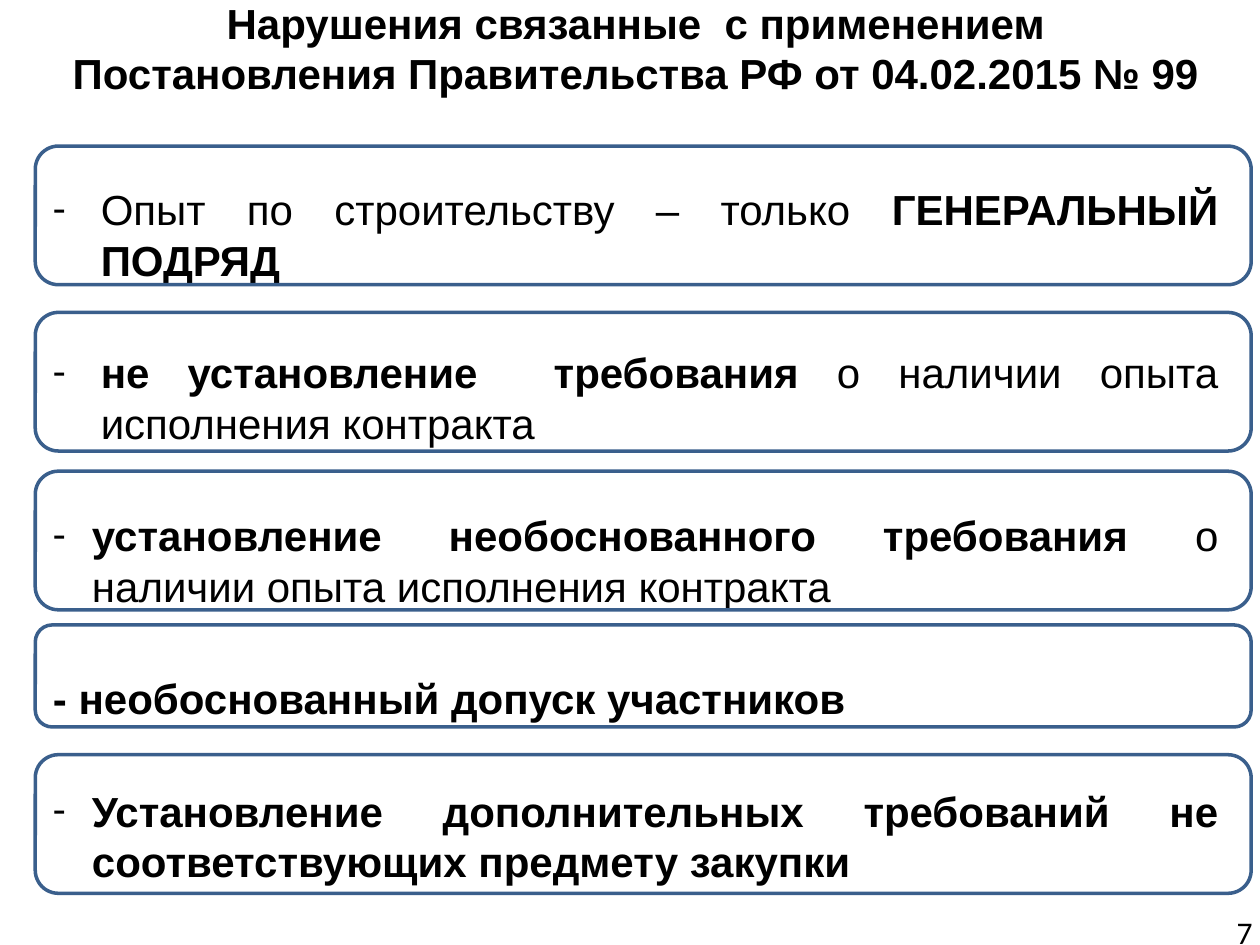
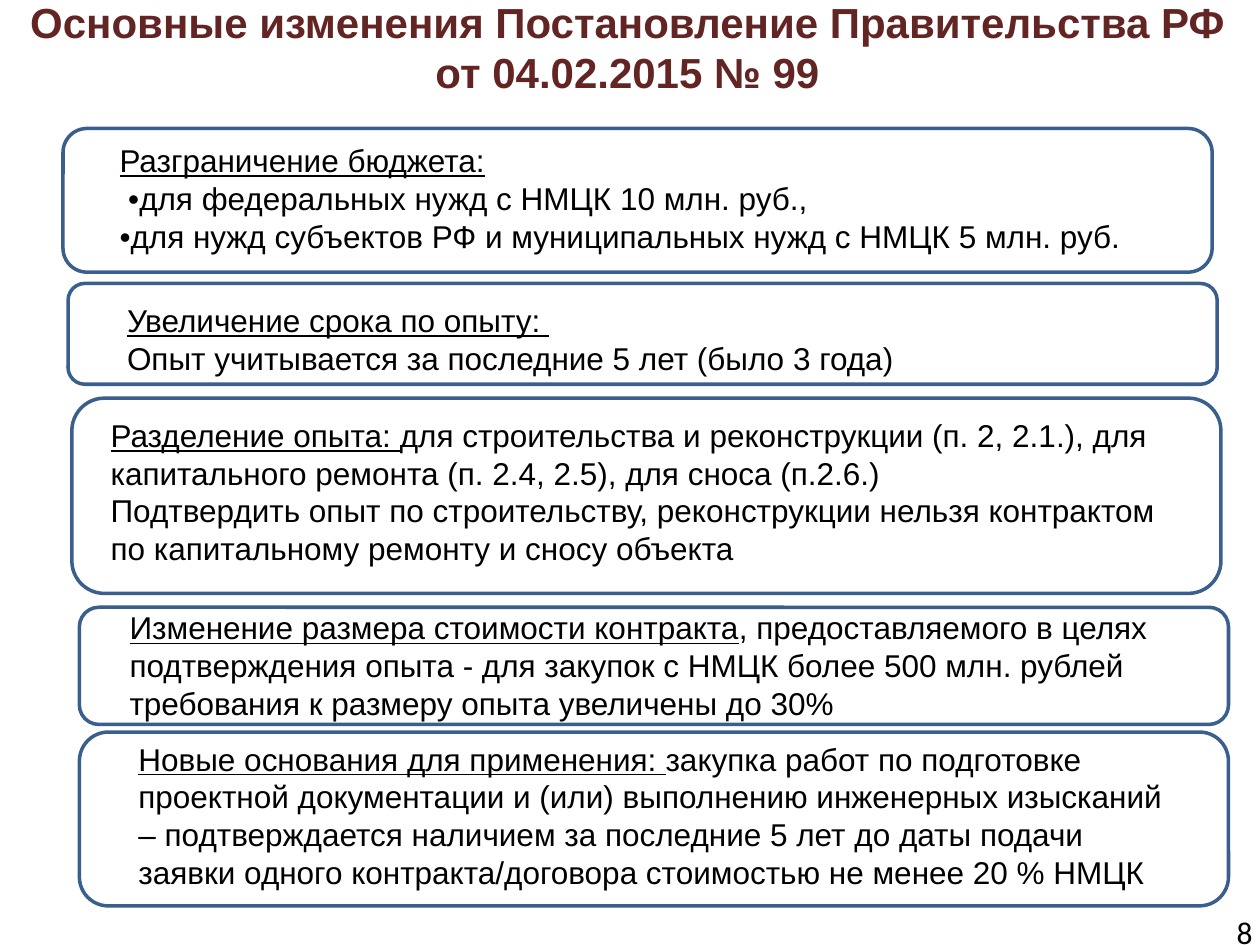
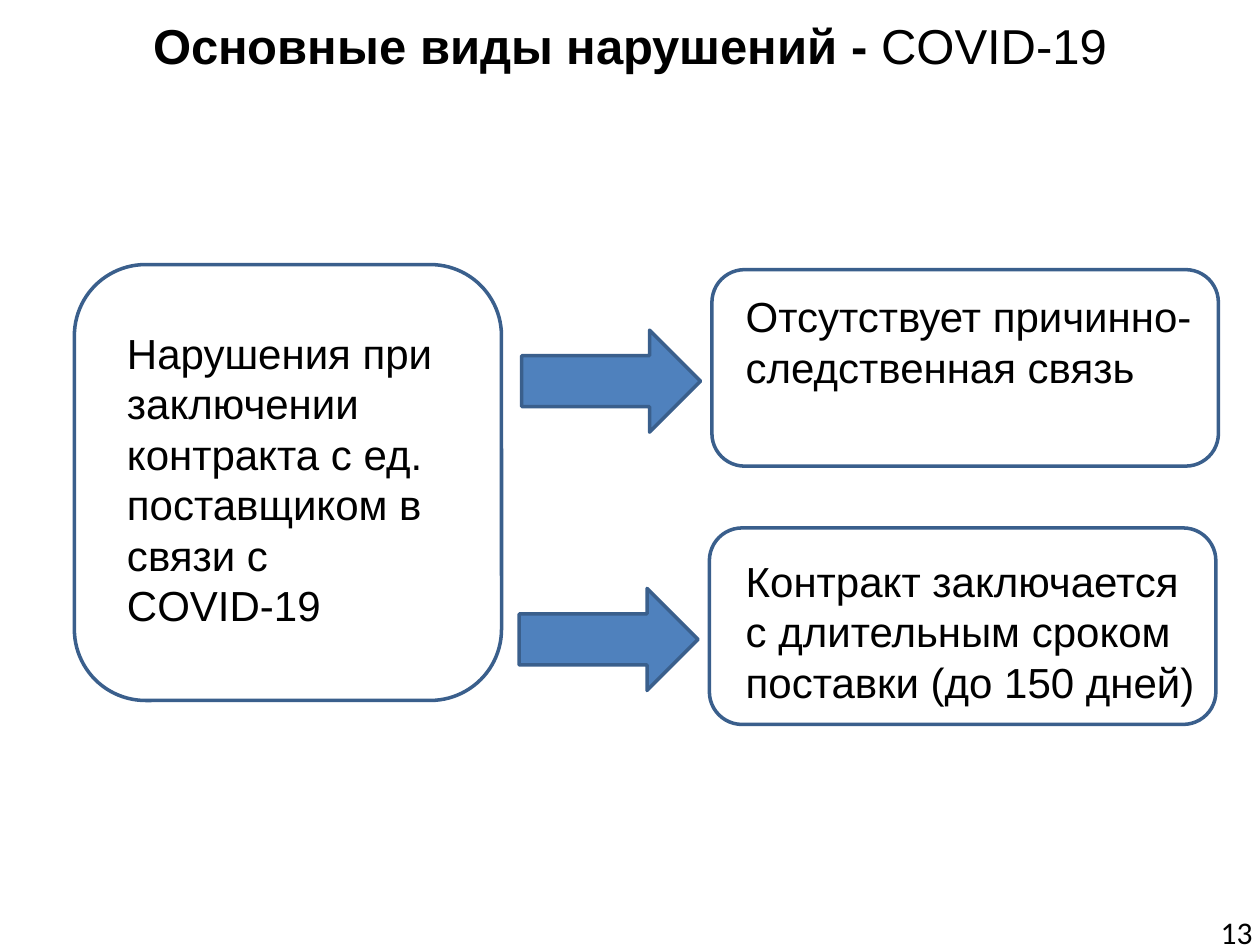
from lxml import etree
from pptx import Presentation
from pptx.dml.color import RGBColor
from pptx.enum.shapes import MSO_SHAPE
from pptx.enum.text import MSO_ANCHOR, MSO_AUTO_SIZE, PP_ALIGN
from pptx.oxml.ns import qn
from pptx.util import Inches, Pt

BLACK = RGBColor(0x00, 0x00, 0x00)
MAROON = RGBColor(0x63, 0x25, 0x23)
BLUE = RGBColor(0x4F, 0x81, 0xBD)
NAVY = RGBColor(0x3A, 0x5F, 0x8C)
ROUND, ARROW = MSO_SHAPE.ROUNDED_RECTANGLE, MSO_SHAPE.RIGHT_ARROW
LEFT, CENTER, RIGHT, JUSTIFY = PP_ALIGN.LEFT, PP_ALIGN.CENTER, PP_ALIGN.RIGHT, PP_ALIGN.JUSTIFY
TOP, FIXED = MSO_ANCHOR.TOP, MSO_AUTO_SIZE.NONE

FAULT_TITLE = [("Нарушения связанные  с применением Постановления Правительства РФ от 04.02.2015 № 99", "b")]
FAULTS = [
    [("Опыт по строительству – только ", ""), ("ГЕНЕРАЛЬНЫЙ ПОДРЯД", "b")],
    [("не установление  требования", "b"), (" о наличии опыта исполнения контракта", "")],
    [("установление необоснованного требования", "b"), (" о наличии опыта исполнения контракта", "")],
    [("- необоснованный допуск участников", "b")],
    [("Установление дополнительных требований не соответствующих предмету закупки", "b")],
]
FAULT_DENTS = [0.38, 0.38, 0.31, 0, 0.31]
FAULT_ROWS = [(1.16, 1.1), (2.48, 1.1), (3.74, 1.1), (4.96, 0.81), (5.99, 1.1)]

NEWS_TITLE = [("Основные изменения Постановление Правительства РФ от 04.02.2015 № 99", "b")]
NEWS = [
    ((0.5, 1.02, 9.12, 1.14), (0.85, 1.07, 8.69, 1.01), [
        [("Разграничение бюджета:", "u")],
        [(" •для федеральных нужд с НМЦК 10 млн. руб.,", "")],
        [("•для нужд субъектов РФ и муниципальных нужд с НМЦК 5 млн. руб.", "")]]),
    ((0.54, 2.25, 9.12, 0.8), (0.91, 2.34, 8.38, 0.71), [
        [("Увеличение срока по опыту: ", "u")],
        [("Опыт учитывается за последние 5 лет (было 3 года)", "")]]),
    ((0.57, 3.16, 9.12, 1.55), (0.78, 3.25, 8.64, 1.31), [
        [("Разделение опыта: ", "u"),
         ("для строительства и реконструкции (п. 2, 2.1.), для капитального ремонта "
          "(п. 2.4, 2.5), для сноса (п.2.6.)", "")],
        [("Подтвердить опыт по строительству, реконструкции нельзя контрактом "
          "по капитальному ремонту и сносу объекта", "")]]),
    ((0.63, 4.82, 9.12, 0.93), (0.93, 4.78, 9.12, 1.01), [
        [("Изменение размера стоимости контракта", "u"),
         (", предоставляемого в целях подтверждения опыта - для закупок с НМЦК более "
          "500 млн. рублей требования к размеру опыта увеличены до 30%", "")]]),
    ((0.63, 5.81, 9.12, 1.38), (1, 5.82, 8.38, 1.31), [
        [("Новые основания для применения: ", "u"),
         ("закупка работ по подготовке проектной документации и (или) выполнению "
          "инженерных изысканий – подтверждается наличием за последние 5 лет до даты "
          "подачи заявки одного контракта/договора стоимостью не менее 20 % НМЦК", "")]]),
]

COVID_TITLE = [("Основные виды нарушений - ", "b"), ("COVID-19", "")]
COVID = [
    ((0.59, 2.1, 3.39, 3.46), (0.91, 2.55, 2.93, 2.52), [
        [("Нарушения при заключении контракта с ед. поставщиком в связи с COVID-19", "")]]),
    ((5.65, 2.14, 4.02, 1.56), (5.82, 2.26, 3.77, 0.91), [
        [("Отсутствует причинно-следственная связь", "")]]),
    ((5.63, 4.19, 4.02, 1.56), (5.82, 4.36, 3.78, 1.31), [
        [("Контракт заключается с длительным сроком", "")],
        [("поставки (до 150 дней)", "")]]),
]
ARROWS = [(4.14, 2.62, 1.42, 0.81), (4.12, 4.67, 1.42, 0.81)]


def place(shape, box):
    shape.left, shape.top, shape.width, shape.height = map(Inches, box)


def dash(para, dent):
    props = para._p.get_or_add_pPr()
    props.set("marL", str(Inches(dent)))
    props.set("indent", str(-Inches(dent)))
    if dent:
        etree.SubElement(props, qn("a:buFont")).set("typeface", "Calibri")
        etree.SubElement(props, qn("a:buChar")).set("char", "-")
    else:
        etree.SubElement(props, qn("a:buNone"))


def write(shape, paras, size=18, color=BLACK, font="Arial", align=LEFT, gap=0, dents=None):
    frame = shape.text_frame
    frame.word_wrap = True
    frame.auto_size = FIXED
    frame.vertical_anchor = TOP
    for i, runs in enumerate(paras):
        para = frame.add_paragraph() if i else frame.paragraphs[0]
        para.alignment = align
        para.space_before = Pt(gap if i else 0)
        if dents:
            dash(para, dents[i])
        for text, style in runs:
            run = para.add_run()
            run.text = text
            face = run.font
            face.name, face.size = font, Pt(size)
            face.bold, face.underline = style == "b", style == "u"
            face.color.rgb = color


def label(slide, box, paras, **style):
    write(slide.shapes.add_textbox(*map(Inches, box)), paras, **style)


def draw(slide, kind, box, fill=None):
    shape = slide.shapes.add_shape(kind, *map(Inches, box))
    shape.shadow.inherit = False
    if fill is None:
        shape.fill.background()
    else:
        shape.fill.solid()
        shape.fill.fore_color.rgb = fill
    shape.line.color.rgb = NAVY
    shape.line.width = Pt(2)


def start(deck, layout, page, title, box, size=24, color=BLACK):
    slide = deck.slides.add_slide(deck.slide_layouts[layout])
    place(slide.shapes.title, box)
    write(slide.shapes.title, [title], size=size, color=color, align=CENTER)
    label(slide, (7.71, 7.2, 2.33, 0.33), [[(page, "")]], font="Calibri", align=RIGHT)
    return slide


def panels(slide, items, size):
    for frame, box, paras in items:
        draw(slide, ROUND, frame)
        label(slide, box, paras, size=size)


def main():
    deck = Presentation()
    deck.slide_width, deck.slide_height = Inches(10), Inches(7.5)

    slide = start(deck, 1, "7", FAULT_TITLE, (0.39, -0.07, 9.31, 0.91))
    body = slide.placeholders[1]
    place(body, (0.32, 1.41, 9.45, 5.65))
    write(body, FAULTS, size=24, align=JUSTIFY, gap=35.5, dents=FAULT_DENTS)
    for top, high in FAULT_ROWS:
        draw(slide, ROUND, (0.28, top, 9.65, high))

    slide = start(deck, 5, "8", NEWS_TITLE, (-0.02, -0.08, 10, 0.9), color=MAROON)
    panels(slide, NEWS, 18)

    slide = start(deck, 5, "13", COVID_TITLE, (0, 0.07, 10, 0.69), size=28)
    panels(slide, COVID, 24)
    for box in ARROWS:
        draw(slide, ARROW, box, fill=BLUE)

    deck.save("out.pptx")


if __name__ == "__main__":
    main()
